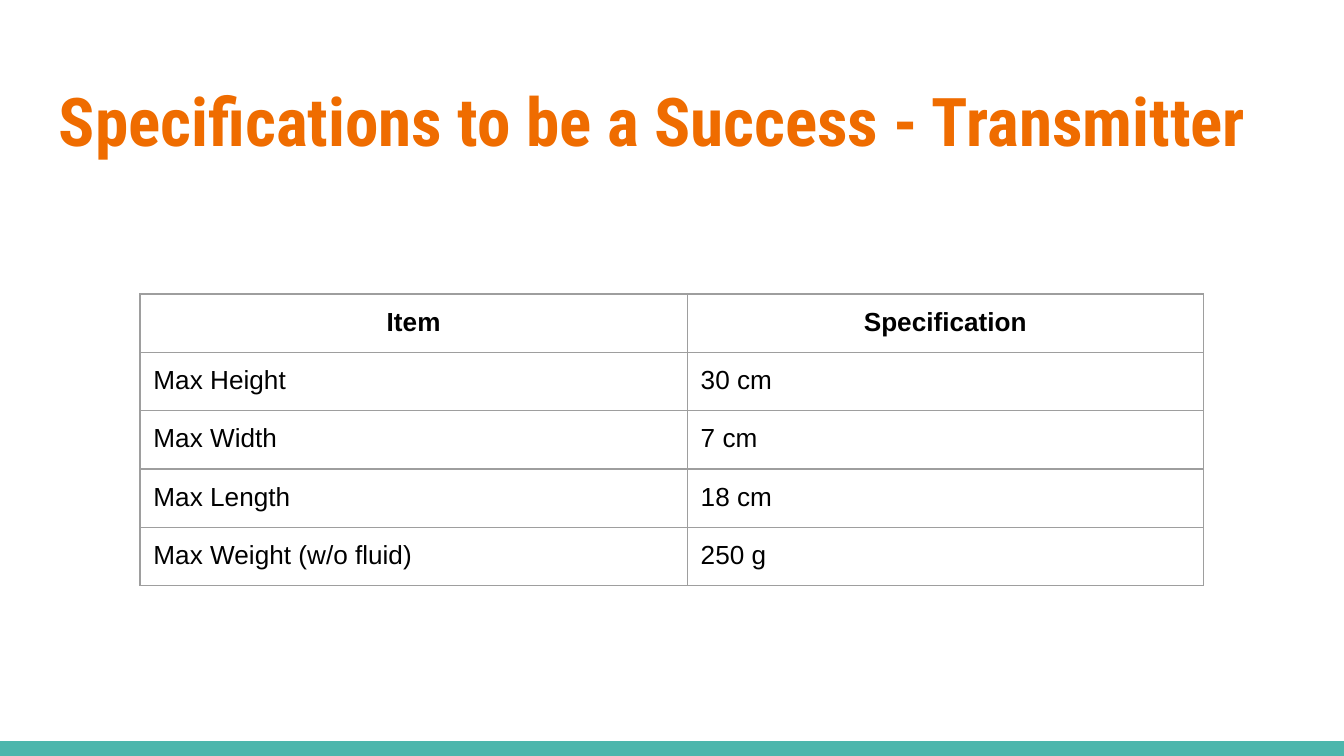
from lxml import etree
from pptx import Presentation
from pptx.dml.color import RGBColor
from pptx.enum.shapes import MSO_SHAPE
from pptx.enum.text import MSO_ANCHOR, PP_ALIGN
from pptx.oxml.ns import qn
from pptx.util import Pt

RECT = MSO_SHAPE.RECTANGLE
TOP = MSO_ANCHOR.TOP
LEFT, CENTER = PP_ALIGN.LEFT, PP_ALIGN.CENTER

COLORS = {
    "title": "EF6C00",
    "bar": "4DB6AC",
    "text": "000000",
    "border": "9E9E9E",
}
WIDTH, HEIGHT = 720, 405
BAR = 7.9
INSET = 7.2
ROW = 30
COLS = [293.2, 276.6]
SPECS = [
    ("Item", "Specification"),
    ("Max Height", "30 cm"),
    ("Max Width", "7 cm"),
    ("Max Length", "18 cm"),
    ("Max Weight (w/o fluid)", "250 g"),
]


def color(name):
    return RGBColor.from_string(COLORS[name])


def style(para, font, size, tint, bold):
    for run in para.runs:
        run.font.name = font
        run.font.size = Pt(size)
        run.font.bold = bold
        run.font.color.rgb = color(tint)


def inset(item):
    """Give a cell or text frame the same margin on all sides."""
    item.margin_left = item.margin_right = Pt(INSET)
    item.margin_top = item.margin_bottom = Pt(INSET)


def add_bar(slide):
    bar = slide.shapes.add_shape(
        RECT, 0, Pt(HEIGHT - BAR), Pt(WIDTH), Pt(BAR))
    bar.shadow.inherit = False
    bar.fill.solid()
    bar.fill.fore_color.rgb = color("bar")
    bar.line.fill.background()


def add_title(slide, text):
    box = slide.shapes.add_textbox(Pt(24.5), Pt(35.3), Pt(671), Pt(55.4))
    frame = box.text_frame
    frame.word_wrap = True
    frame.vertical_anchor = TOP
    inset(frame)
    frame.text = text
    style(frame.paragraphs[0], "Roboto Condensed", 36, "title", True)


def add_border(cell):
    """Draw a thin line on all four sides; lines go before the fill."""
    props = cell._tc.get_or_add_tcPr()
    for spot, side in enumerate(("a:lnL", "a:lnR", "a:lnT", "a:lnB")):
        line = etree.Element(qn(side), w=str(Pt(0.75)))
        fill = etree.SubElement(line, qn("a:solidFill"))
        etree.SubElement(fill, qn("a:srgbClr"), val=COLORS["border"])
        props.insert(spot, line)


def fill_cell(cell, text, head):
    cell.fill.background()
    inset(cell)
    cell.vertical_anchor = TOP
    cell.text_frame.text = text
    para = cell.text_frame.paragraphs[0]
    para.alignment = CENTER if head else LEFT
    style(para, "Arial", 14, "text", head)
    add_border(cell)


def add_specs(slide):
    frame = slide.shapes.add_table(
        len(SPECS), len(COLS), Pt(75), Pt(157.5),
        Pt(sum(COLS)), Pt(ROW * len(SPECS)))
    table = frame.table
    table.first_row = table.horz_banding = False
    for col, width in zip(table.columns, COLS):
        col.width = Pt(width)
    for row, (line, texts) in enumerate(zip(table.rows, SPECS)):
        line.height = Pt(ROW)
        for cell, text in zip(line.cells, texts):
            fill_cell(cell, text, row == 0)


def main():
    deck = Presentation()
    deck.slide_width, deck.slide_height = Pt(WIDTH), Pt(HEIGHT)
    slide = deck.slides.add_slide(deck.slide_layouts[6])
    add_bar(slide)
    add_title(slide, "Specifications to be a Success - Transmitter")
    add_specs(slide)
    deck.save("out.pptx")


if __name__ == "__main__":
    main()
